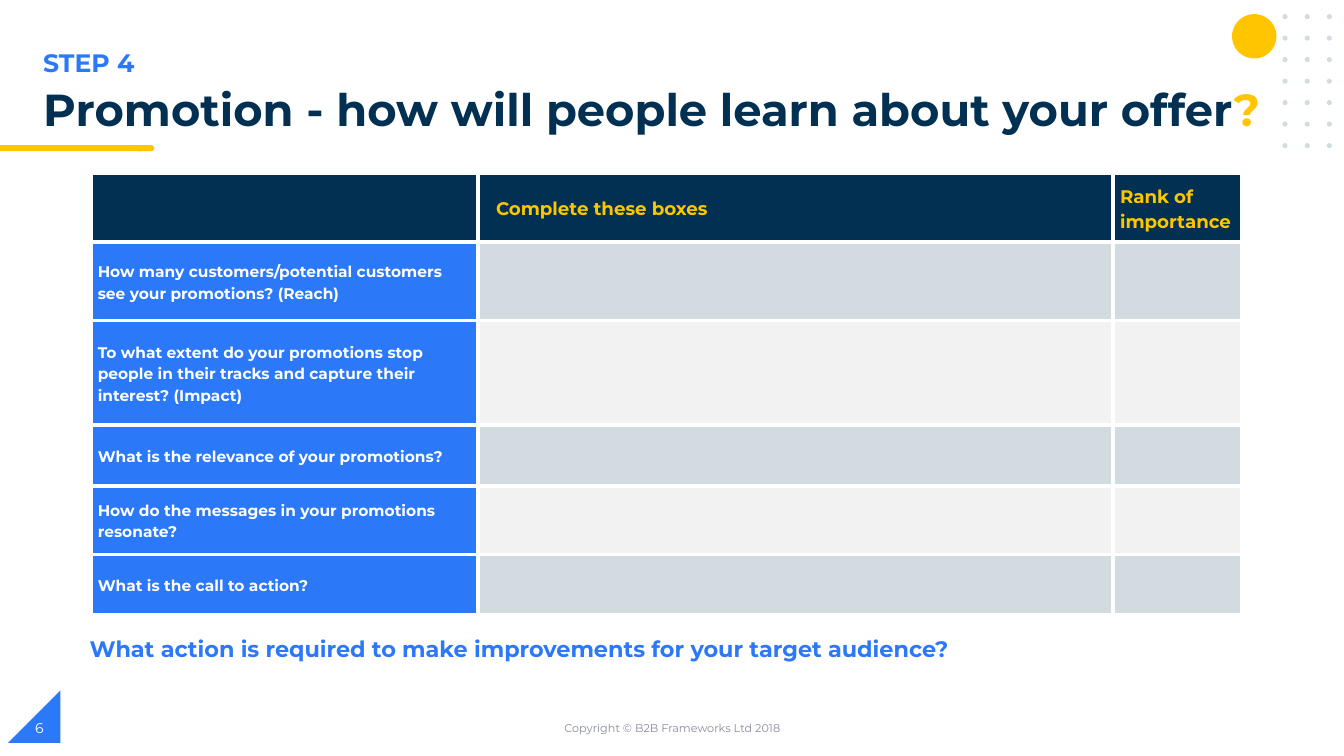
"""Build the promotion worksheet slide."""
from lxml.etree import SubElement
from pptx import Presentation
from pptx.dml.color import RGBColor
from pptx.enum.shapes import MSO_SHAPE
from pptx.enum.text import MSO_ANCHOR, PP_ALIGN
from pptx.oxml.ns import qn
from pptx.util import Inches, Pt

NAVY = RGBColor(0x02, 0x30, 0x53)
BLUE = RGBColor(0x2B, 0x79, 0xF8)
GOLD = RGBColor(0xFF, 0xC6, 0x00)
MIST = RGBColor(0xD1, 0xDB, 0xE0)
PALE = RGBColor(0xF2, 0xF2, 0xF2)
GREY = RGBColor(0x88, 0x8C, 0x97)
WHITE = RGBColor(0xFF, 0xFF, 0xFF)

FONT = "Montserrat"
HEADS = ["", "Complete these boxes", "Rank of importance"]
ASKS = [
    "How many customers/potential customers see your promotions? (Reach)",
    "To what extent do your promotions stop people in their tracks "
    "and capture their interest? (Impact)",
    "What is the relevance of your promotions?",
    "How do the messages in your promotions resonate?",
    "What is the call to action?",
]
COLS = [3.84, 6.3, 1.28]
ROWS = [0.68, 0.78, 1.04, 0.6, 0.68, 0.6]
TITLE = [("Promotion - how will people learn about your offer", NAVY), ("?", GOLD)]
LABELS = [
    ((0.33, 0.42, 6.69, 0.4), [("STEP 4", BLUE)], dict(size=18, bold=True)),
    ((0.33, 0.82, 13, 0.56), TITLE, dict(size=32, bold=True, space=0.9)),
    ((4.42, 7.02, 4.5, 0.4), [("Copyright © B2B Frameworks Ltd 2018", GREY)],
     dict(size=8, align=PP_ALIGN.CENTER, anchor=MSO_ANCHOR.MIDDLE)),
    ((0.25, 7.02, 3, 0.4), [("6", WHITE)], dict(size=10, anchor=MSO_ANCHOR.MIDDLE)),
    ((0.79, 6.25, 9.14, 0.37),
     [("What action is required to make improvements for your target audience?", BLUE)],
     dict(size=16, bold=True)),
]
DOT, DOT_X, DOT_Y = 0.05, 12.72, 0.14
STEP_X, STEP_Y = 0.22, 1.28 / 6
SHAPES = [
    (MSO_SHAPE.FLOWCHART_TERMINATOR, (1.34, 1.44, 0.19, 0.06), GOLD),
    (MSO_SHAPE.RECTANGLE, (0, 1.44, 1.41, 0.06), GOLD),
    (MSO_SHAPE.OVAL, (12.22, 0.14, 0.44, 0.44), GOLD),
] + [
    (MSO_SHAPE.OVAL, (DOT_X + col * STEP_X, DOT_Y + row * STEP_Y, DOT, DOT), MIST)
    for row in range(7) for col in range(3)
]


def write(frame, runs, size, bold=False, align=PP_ALIGN.LEFT,
          anchor=MSO_ANCHOR.TOP, space=None):
    frame.word_wrap = True
    frame.vertical_anchor = anchor
    para = frame.paragraphs[0]
    para.alignment = align
    para.line_spacing = space
    for text, color in runs:
        run = para.add_run()
        run.text = text
        run.font.name = FONT
        run.font.size = Pt(size)
        run.font.bold = bold
        run.font.color.rgb = color


def draw(slide, kind, box, color):
    shape = slide.shapes.add_shape(kind, *map(Inches, box))
    shape.shadow.inherit = False
    shape.fill.solid()
    shape.fill.fore_color.rgb = color
    shape.line.fill.background()
    return shape


def paint(cell, color):
    props = cell._tc.get_or_add_tcPr()
    for side in ("lnL", "lnR", "lnT", "lnB"):
        line = SubElement(props, qn("a:" + side), w=str(Pt(3)))
        fill = SubElement(line, qn("a:solidFill"))
        SubElement(fill, qn("a:srgbClr"), val=str(WHITE))
    cell.fill.solid()
    cell.fill.fore_color.rgb = color


def add_grid(slide):
    box = map(Inches, (0.9, 1.72, sum(COLS), sum(ROWS)))
    table = slide.shapes.add_table(len(ROWS), len(COLS), *box).table
    for col, width in zip(table.columns, COLS):
        col.width = Inches(width)
    cells = [HEADS] + [[ask, "", ""] for ask in ASKS]
    for r, texts in enumerate(cells):
        table.rows[r].height = Inches(ROWS[r])
        for c, text in enumerate(texts):
            cell = table.cell(r, c)
            body = MIST if r % 2 else PALE
            paint(cell, NAVY if r == 0 else BLUE if c == 0 else body)
            cell.margin_left = Inches(0.18 if (r, c) == (0, 1) else 0.07)
            cell.margin_right = Inches(0.07)
            cell.margin_top = cell.margin_bottom = 0
            cell.vertical_anchor = MSO_ANCHOR.MIDDLE
            if text:
                size, color = (11, WHITE) if r else (13, GOLD)
                write(cell.text_frame, [(text, color)], size=size, bold=True,
                      anchor=None, space=1.15)


def main():
    deck = Presentation()
    deck.slide_width, deck.slide_height = Inches(13.33), Inches(7.5)
    slide = deck.slides.add_slide(deck.slide_layouts[6])
    corner = draw(slide, MSO_SHAPE.RIGHT_TRIANGLE, (0.08, 6.85, 0.52, 0.52), BLUE)
    corner._element.spPr.get_or_add_xfrm().set("flipH", "1")
    for kind, box, color in SHAPES:
        draw(slide, kind, box, color)
    add_grid(slide)
    for box, runs, style in LABELS:
        label = slide.shapes.add_textbox(*map(Inches, box))
        write(label.text_frame, runs, **style)
    deck.save("out.pptx")


if __name__ == "__main__":
    main()
